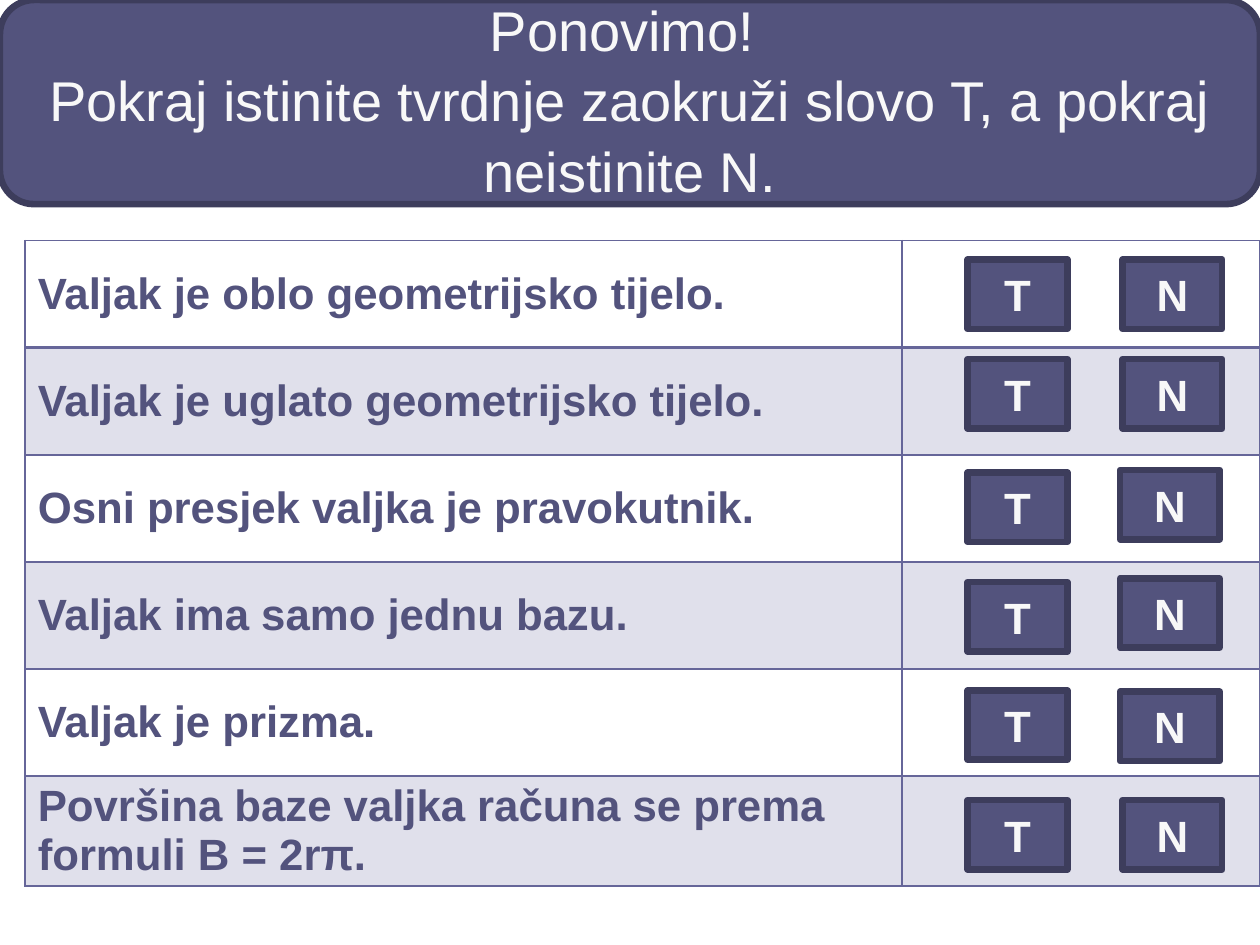
from lxml.etree import SubElement
from pptx import Presentation
from pptx.dml.color import RGBColor
from pptx.enum.shapes import MSO_SHAPE
from pptx.enum.text import MSO_ANCHOR, PP_ALIGN
from pptx.oxml.ns import qn
from pptx.util import Inches, Pt

PURPLE, DARK, BORDER, BAND, LIGHT = "53537D", "3D3D5C", "666699", "E0E0EB", "F8F8F8"
TITLE = "Ponovimo! \vPokraj istinite tvrdnje zaokruži slovo T, a pokraj neistinite N."
# Statement, then left and top of its T and N buttons
ROWS = [
    ("Valjak je oblo geometrijsko tijelo.", (7.68, 2.06), (8.91, 2.06)),
    ("Valjak je uglato geometrijsko tijelo.", (7.68, 2.85), (8.91, 2.85)),
    ("Osni presjek valjka je pravokutnik.", (7.68, 3.75), (8.89, 3.73)),
    ("Valjak ima samo jednu bazu.", (7.68, 4.62), (8.89, 4.59)),
    ("Valjak je prizma.", (7.68, 5.48), (8.89, 5.49)),
    ("Površina baze valjka računa se prema formuli B = 2rπ.", (7.68, 6.35), (8.91, 6.35)),
]


def color(value):
    return RGBColor.from_string(value)


def write(text_frame, text, size, font_color, bold=False, align=PP_ALIGN.CENTER):
    text_frame.word_wrap = True
    text_frame.text = text
    paragraph = text_frame.paragraphs[0]
    paragraph.alignment = align
    font = paragraph.font
    font.name, font.size, font.bold = "Arial", Pt(size), bold
    font.color.rgb = color(font_color)
    return paragraph


def add_box(slide, preset, left, top, width, height):
    shape = slide.shapes.add_shape(
        preset, Inches(left), Inches(top), Inches(width), Inches(height))
    shape.shadow.inherit = False
    shape.fill.solid()
    shape.fill.fore_color.rgb = color(PURPLE)
    shape.line.color.rgb = color(DARK)
    shape.line.width = Pt(3.78)
    SubElement(shape.line._get_or_add_ln(), qn("a:round"))
    return shape


def add_title(slide):
    box = slide.shapes.add_textbox(0, 0, Inches(10), Inches(1.55))
    paragraph = write(box.text_frame, TITLE, 32, LIGHT)
    paragraph.line_spacing = 1.05
    box.text_frame.vertical_anchor = MSO_ANCHOR.MIDDLE


def add_button(slide, letter, left, top):
    button = add_box(slide, MSO_SHAPE.ACTION_BUTTON_CUSTOM, left, top, 0.79, 0.55)
    frame = button.text_frame
    frame.margin_left = frame.margin_right = frame.margin_top = frame.margin_bottom = 0
    frame.vertical_anchor = MSO_ANCHOR.MIDDLE
    write(frame, letter, 25, LIGHT, bold=True)


def set_borders(cell, bottom_width):
    properties = cell._tc.get_or_add_tcPr()
    widths = {"a:lnL": 1, "a:lnR": 1, "a:lnT": 1, "a:lnB": bottom_width}
    for index, (tag, width) in enumerate(widths.items()):
        line = properties.makeelement(qn(tag), {"w": str(Pt(width))})
        fill = SubElement(line, qn("a:solidFill"))
        SubElement(fill, qn("a:srgbClr"), val=BORDER)
        properties.insert(index, line)


def add_statements(slide):
    table = slide.shapes.add_table(
        len(ROWS), 2, Inches(0.2), Inches(1.91), Inches(9.8), Inches(5.1)).table
    table.columns[0].width = Inches(6.96)
    table.columns[1].width = Inches(2.84)
    table.first_row = table.horz_banding = False
    for index, (statement, *_) in enumerate(ROWS):
        table.rows[index].height = Inches(0.85)
        for cell in table.rows[index].cells:
            if index % 2:
                cell.fill.solid()
                cell.fill.fore_color.rgb = color(BAND)
            else:
                cell.fill.background()
            set_borders(cell, 2 if index == 0 else 1)
        cell = table.cell(index, 0)
        cell.vertical_anchor = MSO_ANCHOR.MIDDLE
        write(cell.text_frame, statement, 25, PURPLE, bold=True, align=PP_ALIGN.LEFT)


def main():
    presentation = Presentation()
    presentation.slide_width, presentation.slide_height = Inches(10), Inches(7.5)
    slide = presentation.slides.add_slide(presentation.slide_layouts[6])
    add_box(slide, MSO_SHAPE.ROUNDED_RECTANGLE, 0, 0, 10, 1.62)
    add_statements(slide)
    add_title(slide)
    for _, true_position, false_position in ROWS:
        add_button(slide, "T", *true_position)
        add_button(slide, "N", *false_position)
    presentation.save("out.pptx")


if __name__ == "__main__":
    main()
